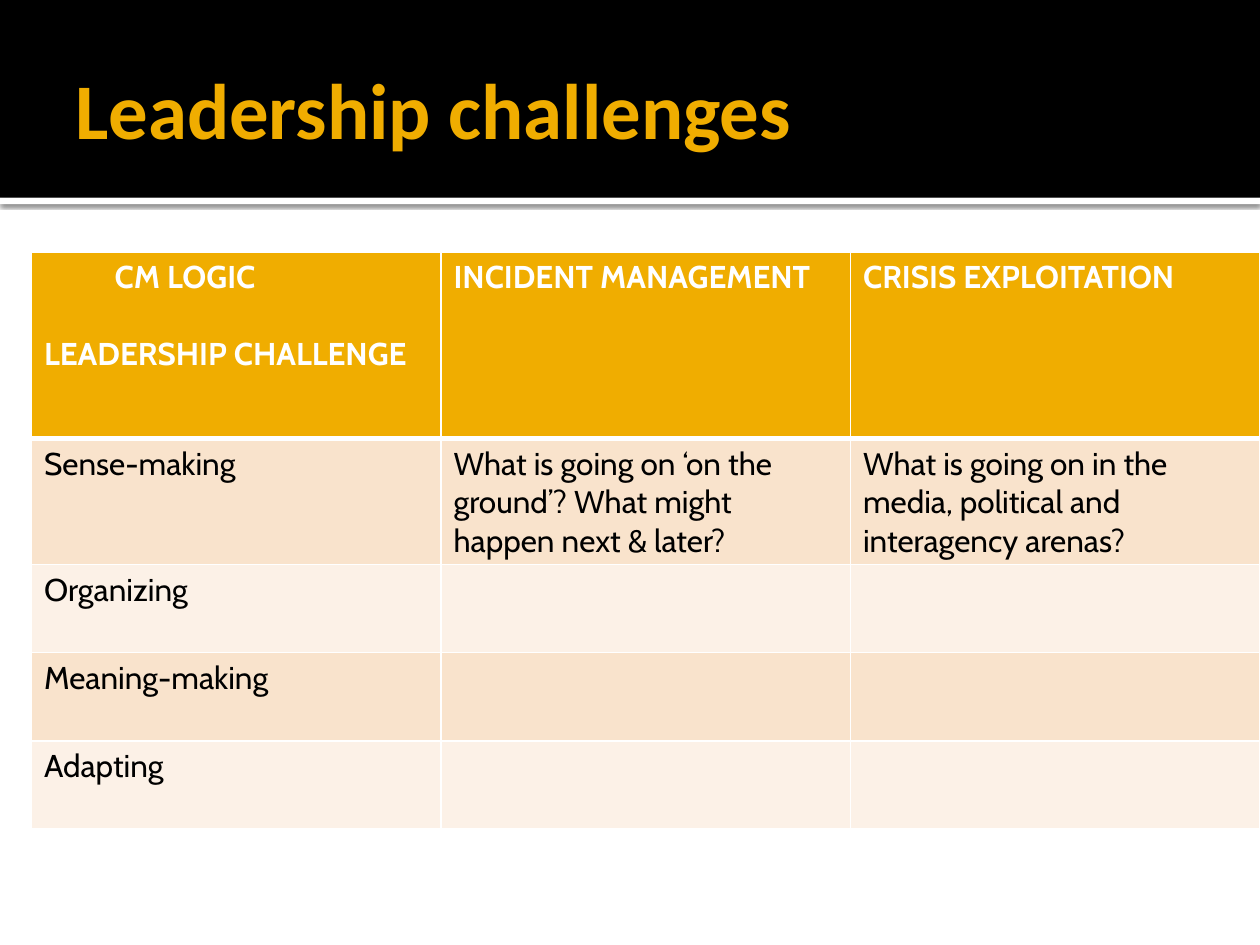
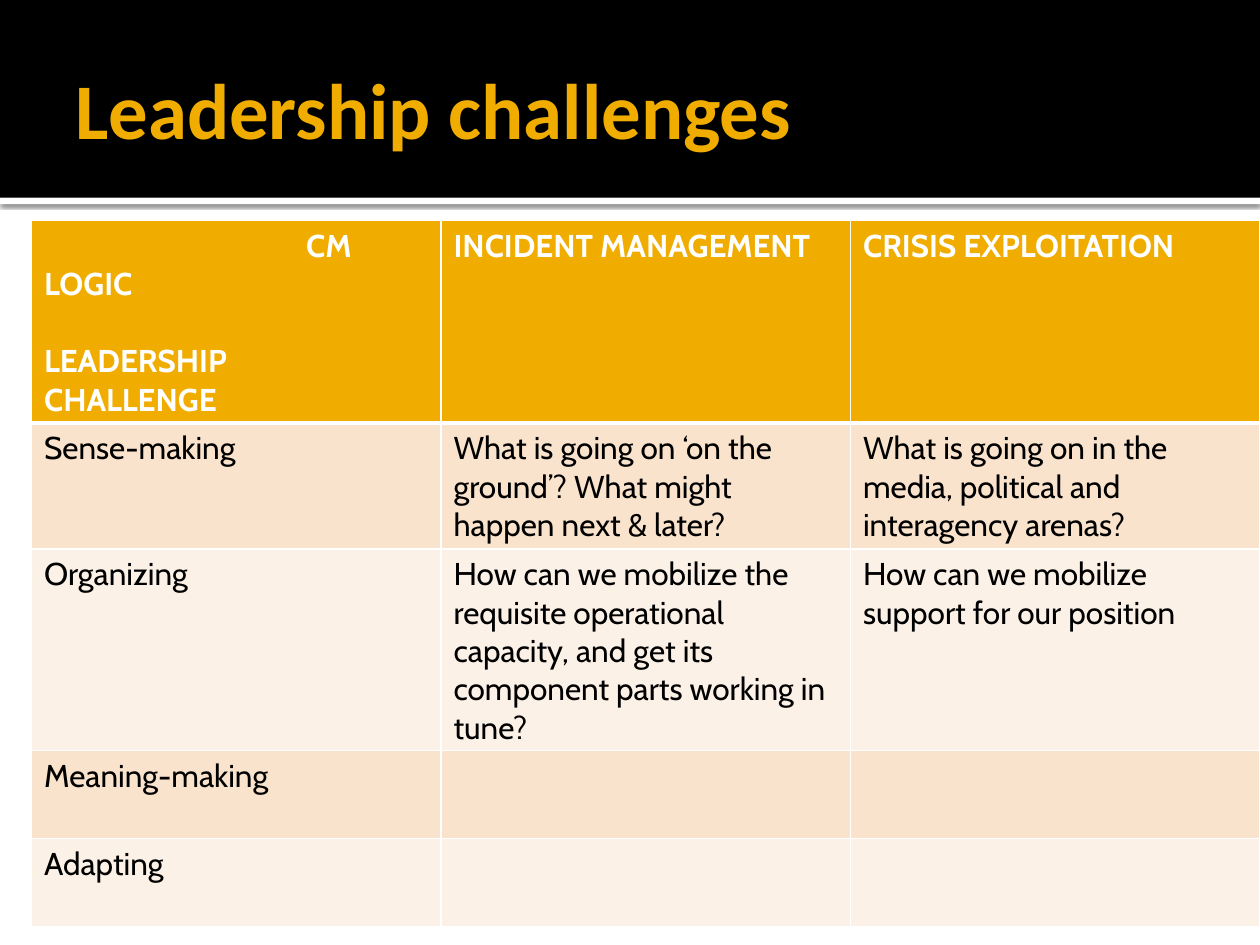
from dataclasses import dataclass

from lxml.etree import SubElement
from pptx import Presentation
from pptx.dml.color import RGBColor
from pptx.enum.shapes import MSO_SHAPE
from pptx.enum.text import MSO_ANCHOR
from pptx.oxml import parse_xml
from pptx.oxml.ns import nsdecls, qn
from pptx.slide import Slide
from pptx.table import _Cell
from pptx.util import Inches, Length, Pt

GOLD = RGBColor(0xF0, 0xAD, 0x00)
SAND = RGBColor(0xF9, 0xE3, 0xCC)
CREAM = RGBColor(0xFC, 0xF1, 0xE7)
WHITE = RGBColor(0xFF, 0xFF, 0xFF)
BLACK = RGBColor(0x00, 0x00, 0x00)

TITLE_FONT = "Calibri"
TABLE_FONT = "Cabin"
PAGE_WIDTH = Inches(10)
BAND_HEIGHT = Inches(1.57)
COLUMN_WIDTH = Inches(3.25)
ROW_HEIGHTS = [Inches(height) for height in (1.48, 0.83, 0.7, 0.7, 0.7)]
LINE_GAP = Pt(22)

COLUMN_HEADS = ["INCIDENT MANAGEMENT", "CRISIS EXPLOITATION"]
SENSE_MAKING = [
    "Sense-making",
    "What is going on ‘on the ground’? What might happen next & later?",
    "What is going on in the media, political and interagency arenas?",
]
ORGANIZING = [
    "Organizing",
    "How can we mobilize the requisite operational capacity, "
    "and get its component parts working in tune?",
    "How can we mobilize support for our position",
]


@dataclass
class ChallengeTable:
    top: Length
    logic_indent: Length  # first-line indent of "CM LOGIC" in the corner cell
    challenge_lines: list[str]
    organizing: list[str]

    def rows(self) -> list[list[str]]:
        corner = "\n".join(["CM LOGIC", *self.challenge_lines])
        return [
            [corner, *COLUMN_HEADS],
            SENSE_MAKING,
            self.organizing,
            ["Meaning-making", "", ""],
            ["Adapting", "", ""],
        ]


TABLES = [
    ChallengeTable(Inches(2), Inches(0.56), ["LEADERSHIP CHALLENGE"], ["Organizing", "", ""]),
    ChallengeTable(Inches(1.75), Inches(2.08), ["LEADERSHIP", "CHALLENGE"], ORGANIZING),
]


def add_band(page: Slide, top: Length, height: Length, color: RGBColor):
    band = page.shapes.add_shape(MSO_SHAPE.RECTANGLE, 0, top, PAGE_WIDTH, height)
    band.shadow.inherit = False
    band.fill.solid()
    band.fill.fore_color.rgb = color
    band.line.fill.background()
    return band


def add_header(page: Slide, title: str) -> None:
    # White rule with a soft shadow, under the black band
    rule = add_band(page, BAND_HEIGHT, Inches(0.05), WHITE)
    effects = rule.element.spPr.find(qn("a:effectLst"))
    effects.append(parse_xml(
        f'<a:outerShdw {nsdecls("a")} blurRad="{Pt(2.5)}" dist="{Pt(0.8)}" dir="5400000" '
        f'rotWithShape="0"><a:srgbClr val="{BLACK}"><a:alpha val="60000"/></a:srgbClr>'
        "</a:outerShdw>"))
    add_band(page, 0, BAND_HEIGHT, BLACK)

    box = page.shapes.add_textbox(Inches(0.5), Inches(0.17), Inches(9), Inches(1.37))
    frame = box.text_frame
    frame.word_wrap = True
    frame.vertical_anchor = MSO_ANCHOR.MIDDLE
    frame.margin_right = Inches(0.05)
    frame.text = title
    font = frame.paragraphs[0].font
    font.name, font.size, font.bold = TITLE_FONT, Pt(45), True
    font.color.rgb = GOLD


def set_borders(cell: _Cell, top: float, bottom: float) -> None:
    properties = cell._tc.get_or_add_tcPr()
    for side, width in (("L", 1), ("R", 1), ("T", top), ("B", bottom)):
        line = SubElement(properties, qn(f"a:ln{side}"), w=str(Pt(width)))
        fill = SubElement(line, qn("a:solidFill"))
        SubElement(fill, qn("a:srgbClr"), val=str(WHITE))


def fill_cell(cell: _Cell, text: str, row: int) -> None:
    is_head = row == 0
    set_borders(cell, top=3 if row == 1 else 1, bottom=3 if is_head else 1)
    cell.fill.solid()
    cell.fill.fore_color.rgb = GOLD if is_head else (SAND if row % 2 else CREAM)
    cell.text = text
    for para in cell.text_frame.paragraphs:
        para.font.name, para.font.size, para.font.bold = TABLE_FONT, Pt(18), is_head
        para.font.color.rgb = WHITE if is_head else BLACK


def add_challenge_table(page: Slide, content: ChallengeTable) -> None:
    rows = content.rows()
    columns = len(rows[0])
    table = page.shapes.add_table(
        len(rows), columns, Inches(0.25), content.top,
        COLUMN_WIDTH * columns, sum(ROW_HEIGHTS)).table
    for column in table.columns:
        column.width = COLUMN_WIDTH
    for row, (height, texts) in enumerate(zip(ROW_HEIGHTS, rows)):
        table.rows[row].height = height
        for column, text in enumerate(texts):
            fill_cell(table.cell(row, column), text, row)

    # Corner cell: indented logic label above the challenge label
    logic, challenge = table.cell(0, 0).text_frame.paragraphs[:2]
    logic_properties = logic._p.get_or_add_pPr()
    logic_properties.set("marL", "0")
    logic_properties.set("indent", str(content.logic_indent))
    challenge.space_before = LINE_GAP


def main() -> None:
    deck = Presentation()
    deck.slide_width, deck.slide_height = PAGE_WIDTH, Inches(7.5)
    blank = deck.slide_layouts[6]
    for content in TABLES:
        page = deck.slides.add_slide(blank)
        add_header(page, "Leadership challenges")
        add_challenge_table(page, content)
    deck.save("out.pptx")


if __name__ == "__main__":
    main()
